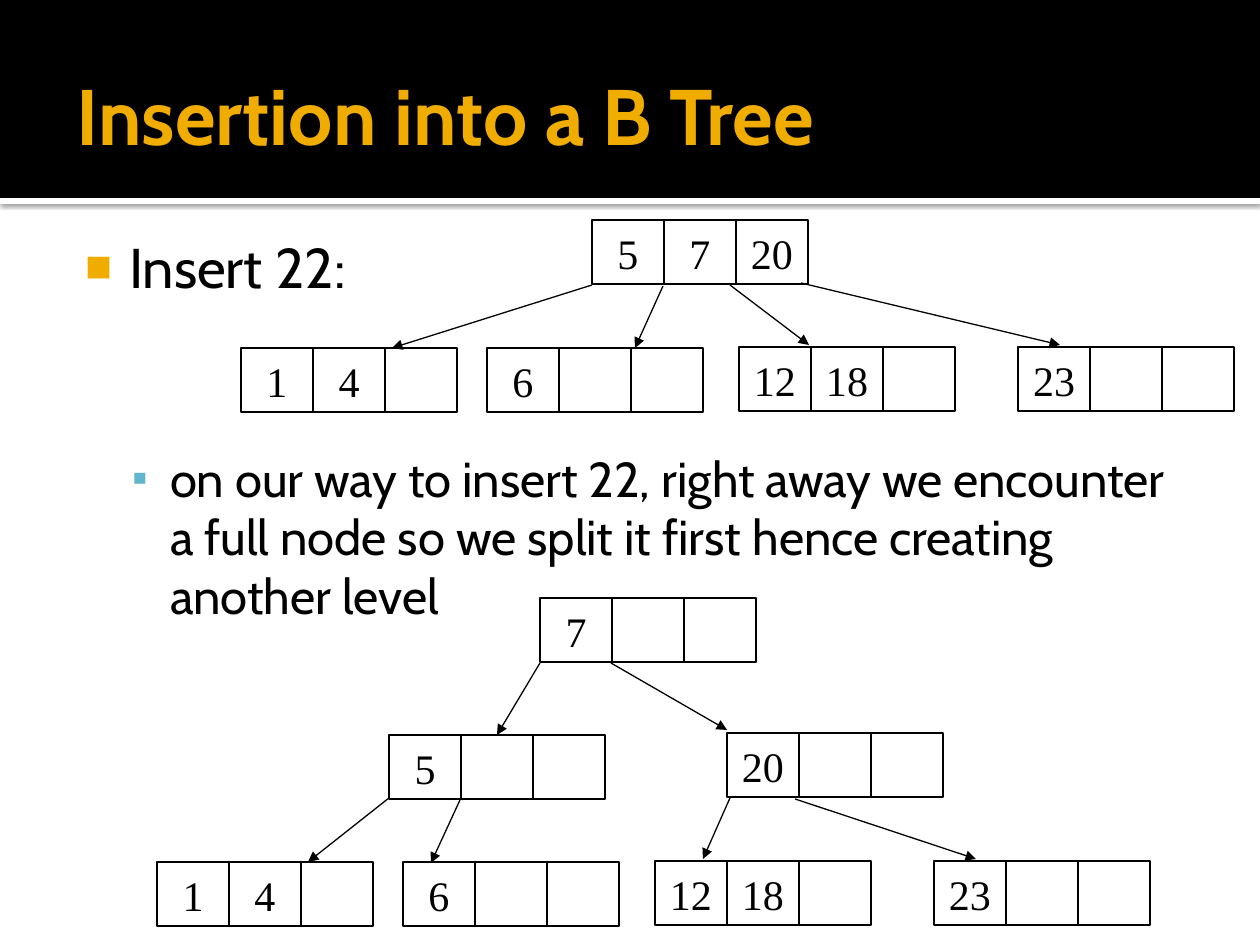
from dataclasses import dataclass

from lxml import etree
from pptx import Presentation
from pptx.dml.color import RGBColor
from pptx.enum.shapes import MSO_CONNECTOR, MSO_SHAPE
from pptx.enum.text import MSO_ANCHOR, MSO_AUTO_SIZE, PP_ALIGN
from pptx.oxml.ns import qn
from pptx.util import Emu, Pt

RECTANGLE = MSO_SHAPE.RECTANGLE
STRAIGHT = MSO_CONNECTOR.STRAIGHT
TOP, MIDDLE, BOTTOM = MSO_ANCHOR.TOP, MSO_ANCHOR.MIDDLE, MSO_ANCHOR.BOTTOM
LEFT, CENTER = PP_ALIGN.LEFT, PP_ALIGN.CENTER
NO_AUTOFIT = MSO_AUTO_SIZE.NONE


@dataclass(frozen=True)
class Theme:
    black: str = "000000"
    white: str = "FFFFFF"
    gold: str = "F0AD00"
    blue: str = "60B5CC"
    sans: str = "Cabin"
    serif: str = "Times New Roman"
    title: int = 45
    heading: int = 32
    detail: int = 28
    key: int = 24
    line: float = 0.75


theme = Theme()
CELL_WIDTH, CELL_HEIGHT, CELLS_PER_NODE = 72, 64, 3


def px(*lengths):
    return [Emu(round(length * 914400 / 126)) for length in lengths]


def set_font(paragraph, family, size, color, bold=False):
    font = paragraph.font
    font.name, font.size, font.bold = family, Pt(size), bold
    font.color.rgb = RGBColor.from_string(color)


prs = Presentation()
prs.slide_width, prs.slide_height = px(1260, 945)
slide = prs.slides.add_slide(prs.slide_layouts[1])
title, body = slide.placeholders

for top, height, color in [(198, 6, theme.white), (0, 198, theme.black)]:
    band = slide.shapes.add_shape(RECTANGLE, *px(0, top, 1260, height))
    band.shadow.inherit = False
    band.fill.solid()
    band.fill.fore_color.rgb = RGBColor.from_string(color)
    band.line.fill.background()
    title.element.addprevious(band.element)
    if color == theme.white:
        effects = band.element.spPr.find(qn("a:effectLst"))
        shadow = etree.SubElement(effects, qn("a:outerShdw"), blurRad="31750",
                                  dist="10160", dir="5400000", rotWithShape="0")
        shade = etree.SubElement(shadow, qn("a:srgbClr"), val=theme.black)
        etree.SubElement(shade, qn("a:alpha"), val="60000")

for holder, place, insets, anchor in [
    (title, (64, 35, 1130, 158), (13, 6, 6, 6), MIDDLE),
    (body, (61, 220, 1136, 659), (8, 12, 12, 6), TOP),
]:
    holder.left, holder.top, holder.width, holder.height = px(*place)
    frame = holder.text_frame
    frame.margin_left, frame.margin_top, frame.margin_right, frame.margin_bottom = px(*insets)
    frame.vertical_anchor = anchor
    frame.word_wrap = True
    frame.auto_size = NO_AUTOFIT

title.text_frame.text = "Insertion into a B Tree"
heading = title.text_frame.paragraphs[0]
heading.alignment = LEFT
set_font(heading, theme.sans, theme.title, theme.gold, True)

body.text_frame.text = (
    "Insert 22:\n"
    "on our way to insert 22, right away we encounter a full node "
    "so we split it first hence creating another level"
)
bullets = [
    (0, 0, 60, -44, theme.gold, 80, "■", theme.heading),
    (1, 85, 101, -38, theme.blue, 90, "▪", theme.detail),
]
for paragraph, (level, gap, margin, indent, color, percent, mark, size) in zip(
        body.text_frame.paragraphs, bullets):
    paragraph.level = level
    paragraph.space_before = Pt(gap)
    properties = paragraph._p.get_or_add_pPr()
    for name, length in zip(("marL", "indent"), px(margin, indent)):
        properties.set(name, str(length))
    bullet_color = etree.SubElement(properties, qn("a:buClr"))
    etree.SubElement(bullet_color, qn("a:srgbClr"), val=color)
    etree.SubElement(properties, qn("a:buSzPct"), val=str(percent * 1000))
    etree.SubElement(properties, qn("a:buChar"), char=mark)
    set_font(paragraph, theme.sans, size, theme.black)

leaves = [
    (241, 348, ["1", "4"]),
    (487, 348, ["6"]),
    (739, 347, ["12", "18"]),
    (1018, 347, ["23"]),
]
split_leaves = [(left - 84, top + 514, keys) for left, top, keys in leaves]
trees = [
    (
        [(592, 220, ["5", "7", "20"]), *leaves],
        [(592, 285, 392, 348), (663, 286, 635, 348),
         (730, 285, 809, 345), (801, 283, 1060, 345)],
    ),
    (
        [(540, 598, ["7"]), (389, 735, ["5"]), (727, 733, ["20"]), *split_leaves],
        [(540, 663, 497, 735), (611, 663, 727, 730),
         (389, 798, 308, 862), (460, 800, 431, 863),
         (730, 798, 703, 859), (795, 799, 976, 859)],
    ),
]

for nodes, arrows in trees:
    tree = slide.shapes.add_group_shape().shapes
    top_middles = {}
    for left, top, keys in nodes:
        for column in range(CELLS_PER_NODE):
            cell_left = left + column * CELL_WIDTH
            cell = tree.add_shape(RECTANGLE, *px(cell_left, top, CELL_WIDTH, CELL_HEIGHT))
            top_middles[cell_left + CELL_WIDTH // 2, top] = cell
            cell.shadow.inherit = False
            cell.fill.background()
            cell.line.color.rgb = RGBColor.from_string(theme.black)
            cell.line.width = Pt(theme.line)
            if column < len(keys):
                cell.text_frame.text = keys[column]
                cell.text_frame.vertical_anchor = BOTTOM
                key = cell.text_frame.paragraphs[0]
                key.alignment = CENTER
                set_font(key, theme.serif, theme.key, theme.black)

    for start_x, start_y, end_x, end_y in arrows:
        arrow = tree.add_connector(STRAIGHT, *px(start_x, start_y, end_x, end_y))
        arrow.line.color.rgb = RGBColor.from_string(theme.black)
        arrow.line.width = Pt(theme.line)
        etree.SubElement(arrow.line._get_or_add_ln(), qn("a:tailEnd"), type="triangle")
        etree.SubElement(arrow.element.spPr, qn("a:effectLst"))
        if (end_x, end_y) in top_middles:
            arrow.end_connect(top_middles[end_x, end_y], 0)

prs.save("out.pptx")
